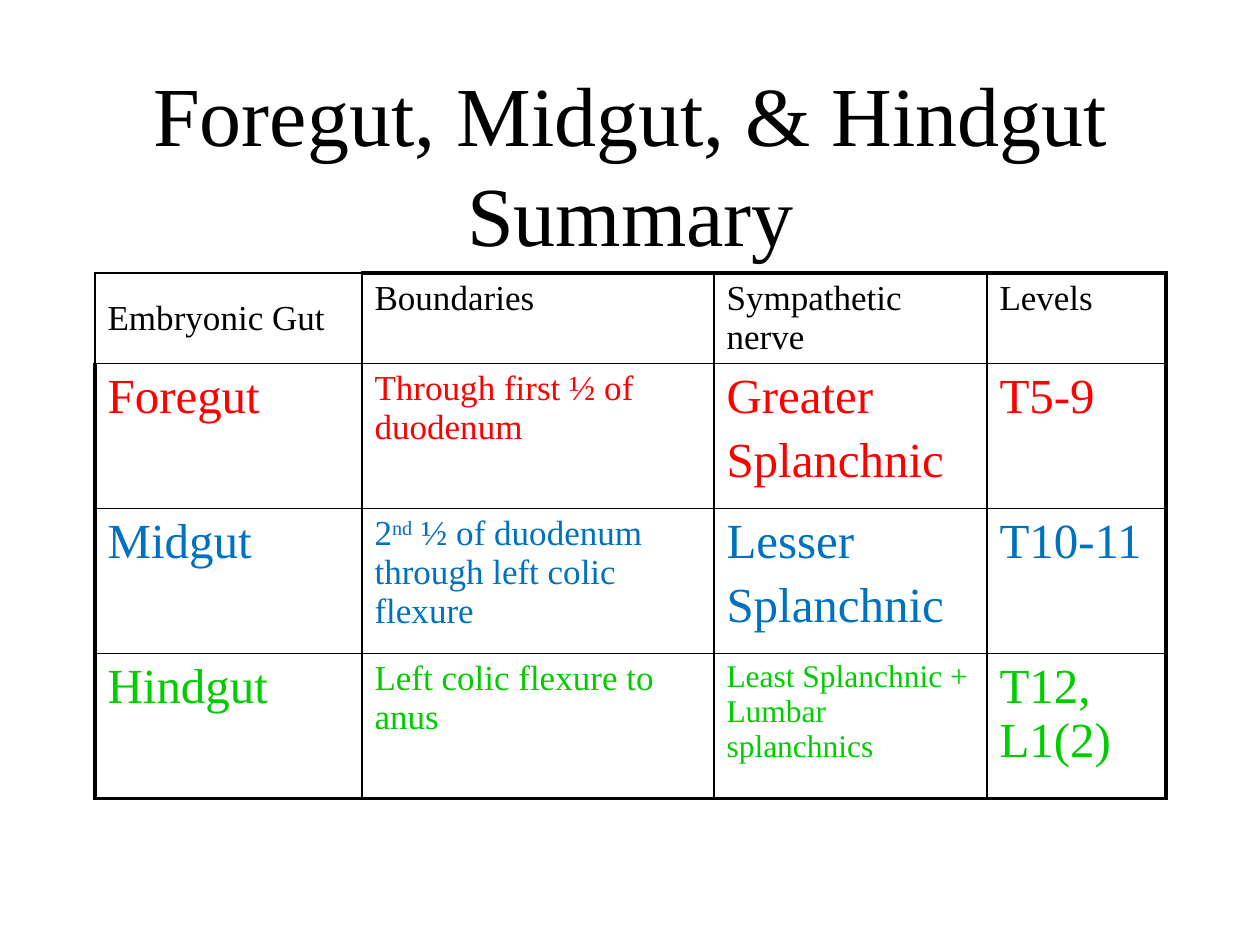
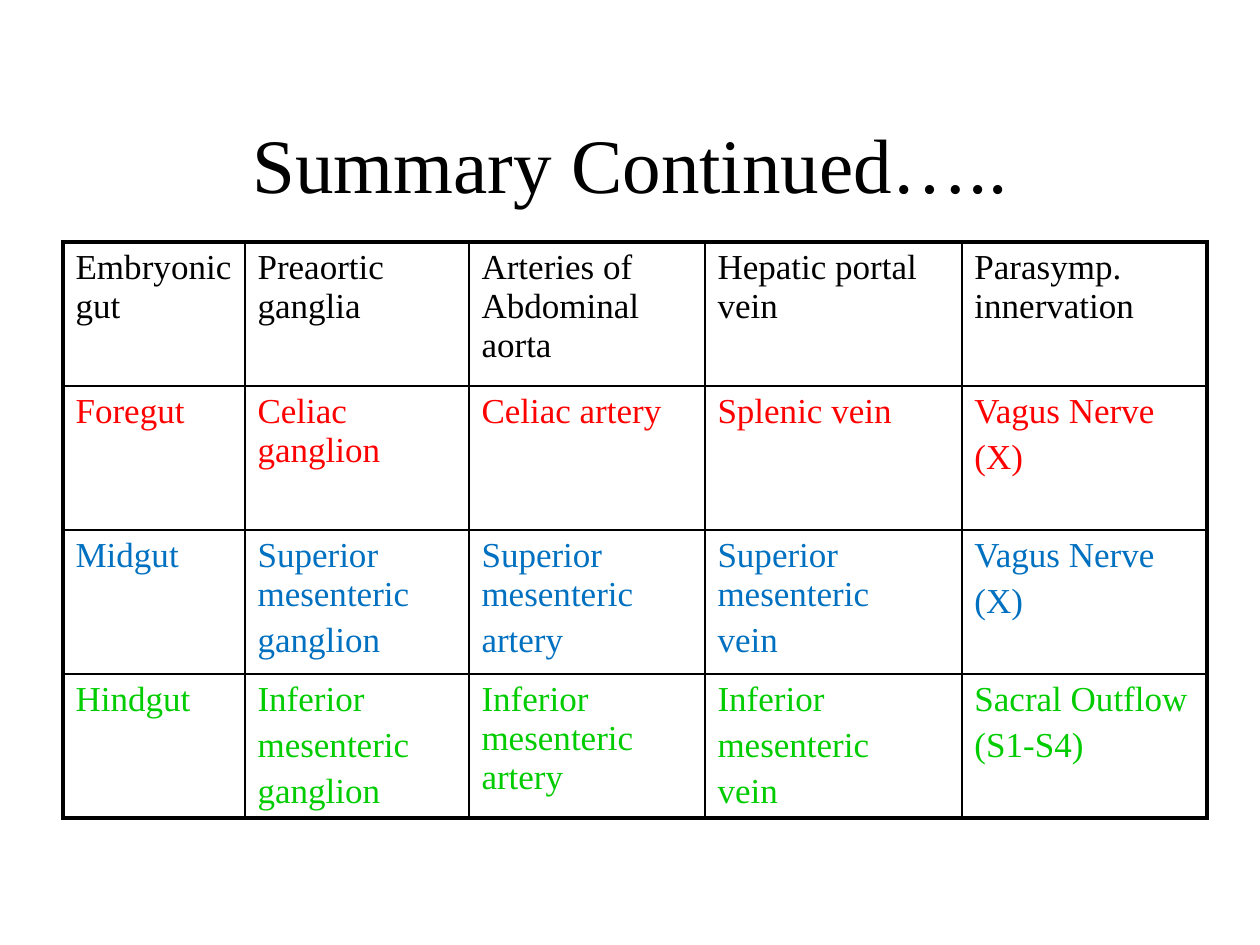
from lxml.etree import SubElement
from pptx import Presentation
from pptx.dml.color import RGBColor
from pptx.enum.text import MSO_ANCHOR, MSO_AUTO_SIZE, PP_ALIGN
from pptx.oxml.ns import qn
from pptx.util import Emu, Pt

PX = 914400 / 126
FONT = "Times New Roman"
COLORS = {"ink": "000000", "paper": "FFFFFF", "foregut": "FF0000",
          "midgut": "0070C0", "hindgut": "00CC00"}
ROW_COLORS = ["ink", "foregut", "midgut", "hindgut"]
TITLE_BOX = (95, 84, 1071, 158)
THIN, THICK = 1, 2.25

BOUNDARIES = [
    ["Embryonic Gut", "Boundaries", "Sympathetic nerve", "Levels"],
    ["Foregut", "Through first ½ of duodenum", "Greater\nSplanchnic", "T5-9"],
    ["Midgut", "2^nd^ ½ of duodenum through left colic flexure",
     "Lesser\nSplanchnic", "T10-11"],
    ["Hindgut", "Left colic flexure to anus",
     "Least Splanchnic + Lumbar splanchnics", "T12, L1(2)"],
]
BOUNDARY_SIZES = [[20] * 4, [28, 20, 28, 28], [28, 20, 28, 28], [28, 20, 18, 28]]

SUPPLY = [
    ["Embryonic gut", "Preaortic ganglia", "Arteries of Abdominal aorta",
     "Hepatic portal vein", "Parasymp. innervation"],
    ["Foregut", "Celiac ganglion", "Celiac artery", "Splenic vein",
     "Vagus Nerve\n(X)"],
    ["Midgut", "Superior mesenteric\nganglion", "Superior mesenteric\nartery",
     "Superior mesenteric\nvein", "Vagus Nerve\n(X)"],
    ["Hindgut", "Inferior\nmesenteric\nganglion", "Inferior mesenteric artery",
     "Inferior\nmesenteric\nvein", "Sacral Outflow\n(S1-S4)"],
]
SUPPLY_SIZES = [[20] * 5] * 4


def px(n):
    """Turn px into EMU."""
    return Emu(round(n * PX))


def style_run(r, size, color):
    """Set the font of one run."""
    r.font.name = FONT
    r.font.size = Pt(size)
    r.font.color.rgb = RGBColor.from_string(COLORS[color])


def add_title(slide, box, text, size):
    """Place and format the slide title."""
    sp = slide.shapes.title
    sp.left, sp.top, sp.width, sp.height = map(px, box)
    tf = sp.text_frame
    tf.text = text
    tf.auto_size = MSO_AUTO_SIZE.NONE
    tf.vertical_anchor = MSO_ANCHOR.MIDDLE
    p = tf.paragraphs[0]
    p.alignment = PP_ALIGN.CENTER
    for r in p.runs:
        style_run(r, size, "ink")


def set_borders(cell, widths):
    """Draw the left, right, top and bottom borders of a cell."""
    tc_pr = cell._tc.get_or_add_tcPr()
    for side, width in zip("LRTB", widths):
        ln = SubElement(tc_pr, qn(f"a:ln{side}"), w=str(Pt(width)))
        fill = SubElement(ln, qn("a:solidFill"))
        SubElement(fill, qn("a:srgbClr"), val=COLORS["ink"])


def fill_cell(cell, text, size, color):
    """Write a cell, one paragraph a line, with ^marks^ around superscript."""
    cell.fill.solid()
    cell.fill.fore_color.rgb = RGBColor.from_string(COLORS["paper"])
    tf = cell.text_frame
    tf.text = text
    for p in tf.paragraphs:
        p.space_before = Pt(size * 0.2)
        parts = p.text.split("^")
        p.text = parts[0]
        for part in parts[1:]:
            p.add_run().text = part
        for i, r in enumerate(p.runs):
            style_run(r, size, color)
            if i % 2:
                r.font._element.set("baseline", "30000")


def add_gut_table(slide, origin, cols, rows, texts, sizes, framed_corner=True):
    """Add a table with one color for each row and a thick outer frame."""
    box = (*origin, sum(cols), sum(rows))
    table = slide.shapes.add_table(len(rows), len(cols), *map(px, box)).table
    table.first_row = table.horz_banding = False
    for col, width in zip(table.columns, cols):
        col.width = px(width)
    for row, height in zip(table.rows, rows):
        row.height = px(height)
    for i, line in enumerate(texts):
        for j, text in enumerate(line):
            cell = table.cell(i, j)
            framed = framed_corner or i + j > 0
            outer = (j == 0, j == len(cols) - 1, i == 0, i == len(rows) - 1)
            set_borders(cell, [THICK if framed and o else THIN for o in outer])
            fill_cell(cell, text, sizes[i][j], ROW_COLORS[i])
    return table


def add_boundaries_slide(prs):
    """Build the slide on boundaries, nerves and levels."""
    slide = prs.slides.add_slide(prs.slide_layouts[5])
    add_title(slide, TITLE_BOX, "Foregut, Midgut, & Hindgut\vSummary", 48)
    table = add_gut_table(slide, (95, 273), [267, 352, 273, 179], [90] + [145] * 3,
                          BOUNDARIES, BOUNDARY_SIZES, framed_corner=False)
    table.cell(0, 0).vertical_anchor = MSO_ANCHOR.MIDDLE


def add_supply_slide(prs):
    """Build the slide on ganglia, vessels and innervation."""
    slide = prs.slides.add_slide(prs.slide_layouts[5])
    add_title(slide, TITLE_BOX, "Summary Continued…..", 44)
    add_gut_table(slide, (63, 242), [182, 224, 236, 257, 245], [144] * 4,
                  SUPPLY, SUPPLY_SIZES)


def main():
    """Build and save the presentation."""
    prs = Presentation()
    prs.slide_width, prs.slide_height = px(1260), px(945)
    add_boundaries_slide(prs)
    add_supply_slide(prs)
    prs.save("out.pptx")


if __name__ == "__main__":
    main()
